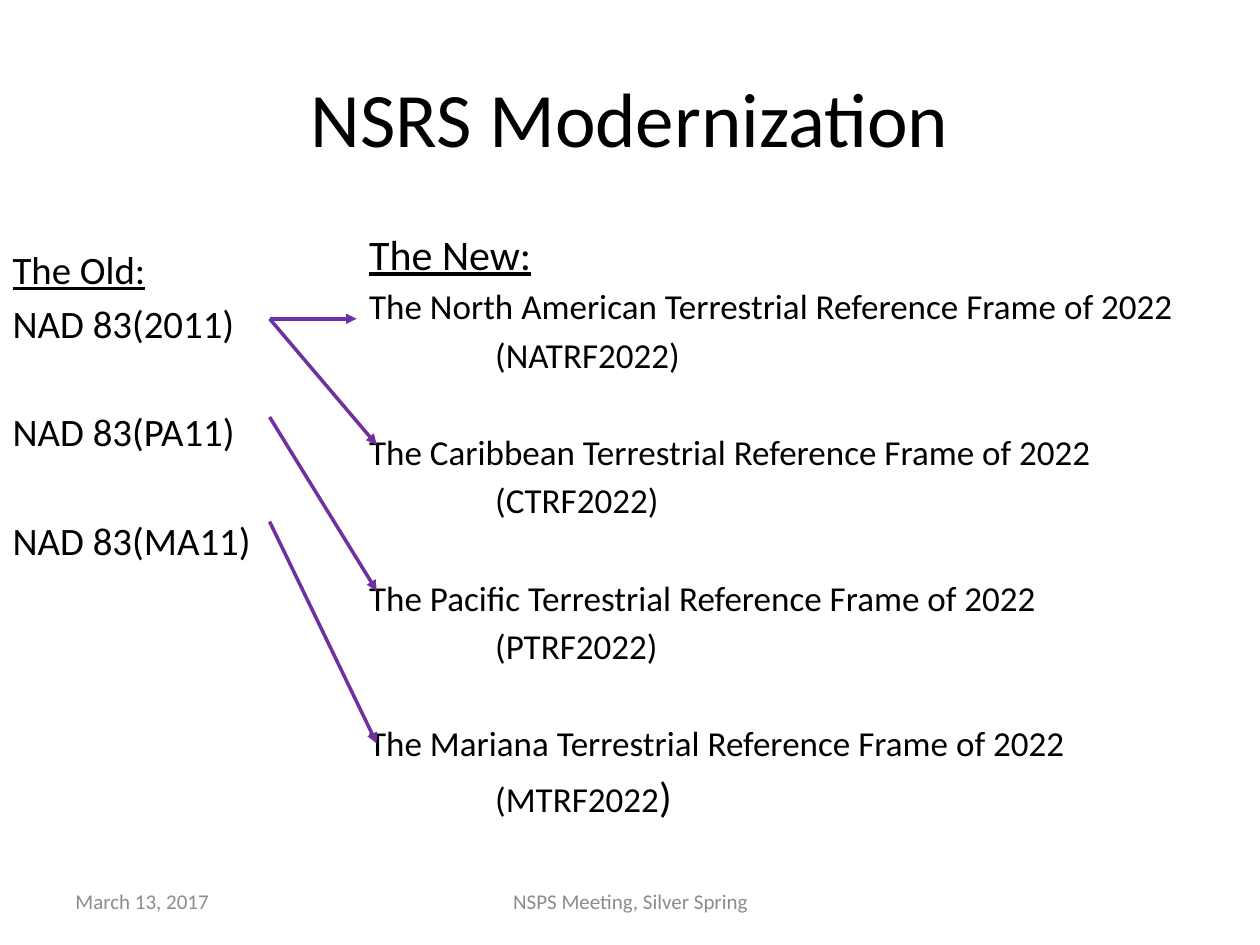
"""Build the NSRS Modernization slide with old and new reference frames."""
from lxml.etree import SubElement
from pptx import Presentation
from pptx.dml.color import RGBColor
from pptx.enum.shapes import MSO_CONNECTOR
from pptx.enum.text import MSO_ANCHOR, MSO_AUTO_SIZE, PP_ALIGN
from pptx.oxml.ns import qn
from pptx.util import Inches, Pt

TITLE = "NSRS Modernization"
OLD = ["NAD 83(2011)", "NAD 83(PA11)", "NAD 83(MA11)"]
NEW = [
    ("North American", "NATRF2022"),
    ("Caribbean", "CTRF2022"),
    ("Pacific", "PTRF2022"),
    ("Mariana", "MTRF2022"),
]
FOOT = [
    ("March 13, 2017", (0.5, 6.95, 2.33, 0.4), PP_ALIGN.LEFT),
    ("NSPS Meeting, Silver Spring", (3.42, 6.95, 3.17, 0.4), PP_ALIGN.CENTER),
]
START = 2.14
LINKS = [
    (2.53, 2.83, 2.53),
    (2.53, 2.99, 3.53),
    (3.31, 2.99, 4.69),
    (4.14, 2.99, 5.9),
]
BLACK, GREY, PURPLE = "000000", "8C8C8C", "7030A0"


def color(part, code):
    part.rgb = RGBColor.from_string(code)


def apply(item, form):
    for name, value in form.items():
        setattr(item, name, value)


def place(shape, box, anchor):
    sides = zip(("left", "top", "width", "height"), box)
    apply(shape, {name: Inches(size) for name, size in sides})
    apply(shape.text_frame, {
        "word_wrap": True,
        "auto_size": MSO_AUTO_SIZE.NONE,
        "vertical_anchor": anchor,
    })
    return shape.text_frame


def write(para, text, size, tint=BLACK, under=False):
    run = para.add_run()
    run.text = text
    apply(run.font, {"name": "Calibri", "size": Pt(size), "underline": under})
    color(run.font.color, tint)


def fill(frame, head, size, rows):
    for i, (text, pts, gap, dent) in enumerate([(head, size, 0, 0)] + rows):
        para = frame.paragraphs[0] if i == 0 else frame.add_paragraph()
        para.space_before = Pt(gap)
        props = para._p.get_or_add_pPr()
        props.set("marL", str(Inches(dent)))
        props.set("indent", "0")
        SubElement(props, qn("a:buNone"))
        write(para, text, pts, under=i == 0)
    return para


def arrow(slide, top, right, end):
    points = map(Inches, (START, top, right, end))
    link = slide.shapes.add_connector(MSO_CONNECTOR.STRAIGHT, *points)
    link.line.width = Pt(2)
    color(link.line.color, PURPLE)
    SubElement(link.line._get_or_add_ln(), qn("a:tailEnd"), type="triangle")
    SubElement(link._element.spPr, qn("a:effectLst"))


def main():
    deck = Presentation()
    deck.slide_width, deck.slide_height = Inches(10), Inches(7.5)
    slide = deck.slides.add_slide(deck.slide_layouts[3])
    title, left, right = slide.placeholders

    frame = place(title, (0.5, 0.3, 9, 1.25), MSO_ANCHOR.MIDDLE)
    frame.paragraphs[0].alignment = PP_ALIGN.CENTER
    write(frame.paragraphs[0], TITLE, 44)

    rows = [(name, 22.2, 35.4 if i else 4.1, 0) for i, name in enumerate(OLD)]
    frame = place(left, (0, 1.9, 2.99, 2.58), MSO_ANCHOR.TOP)
    fill(frame, "The Old:", 22.2, rows)

    rows = []
    for i, (area, code) in enumerate(NEW):
        name = f"The {area} Terrestrial Reference Frame of 2022"
        mark = ")" if i < len(NEW) - 1 else ""
        rows.append((name, 20, 31.6 if i else 3.6, 0))
        rows.append((f"({code}{mark}", 20, 3.6, 1))
    frame = place(right, (2.83, 1.76, 6.92, 5.25), MSO_ANCHOR.TOP)
    write(fill(frame, "The New:", 24, rows), ")", 24)

    for text, box, align in FOOT:
        note = slide.shapes.add_textbox(0, 0, 0, 0)
        frame = place(note, box, MSO_ANCHOR.MIDDLE)
        frame.paragraphs[0].alignment = align
        write(frame.paragraphs[0], text, 12, GREY)

    for link in LINKS:
        arrow(slide, *link)
    deck.save("out.pptx")


if __name__ == "__main__":
    main()
